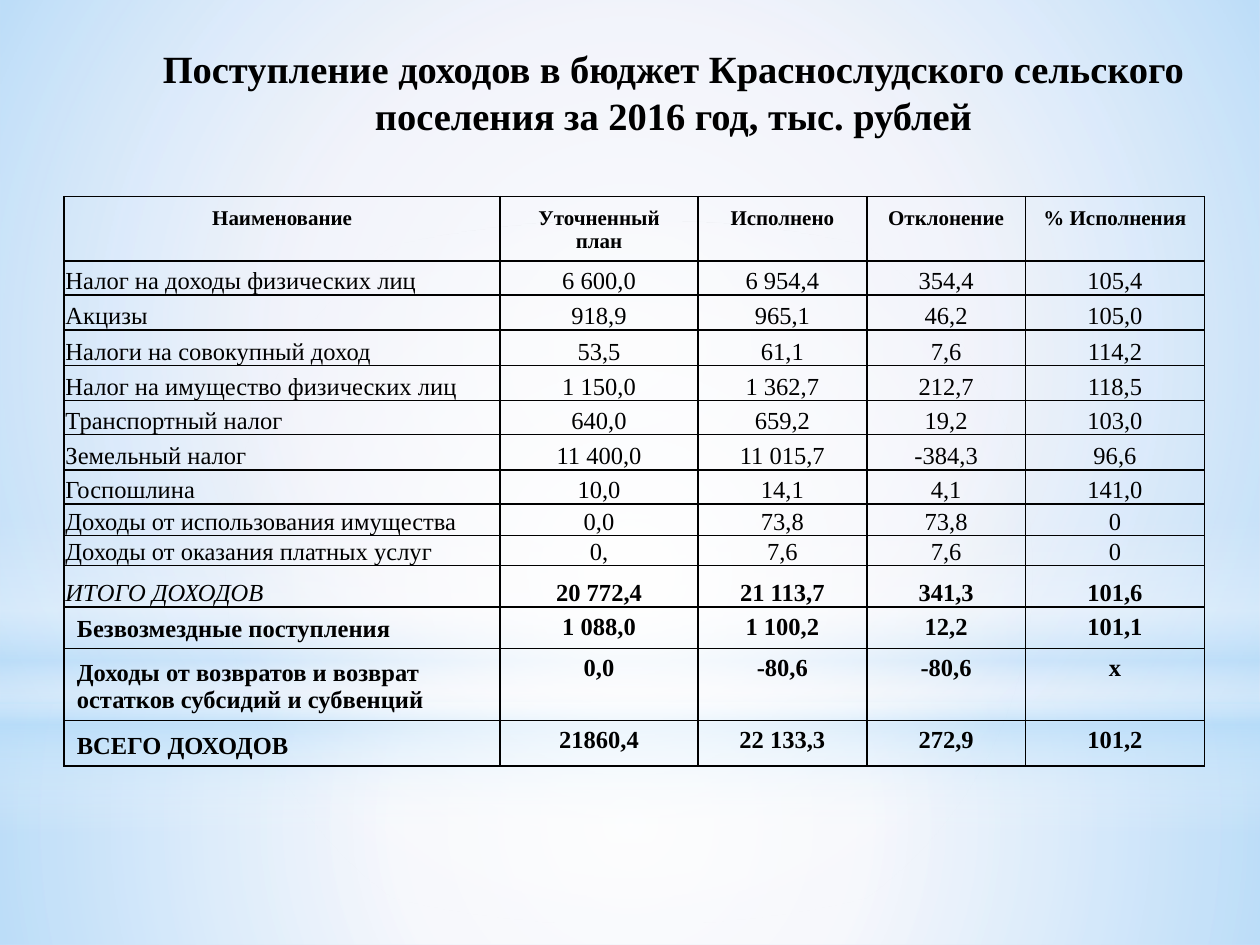
from dataclasses import dataclass
from typing import NamedTuple

from lxml import etree
from pptx import Presentation
from pptx import util as u
from pptx.dml.color import RGBColor
from pptx.enum import shapes, text
from pptx.oxml import parse_xml
from pptx.oxml.ns import nsdecls, qn


@dataclass(frozen=True)
class Theme:
    font: str = "Times New Roman"
    ink: str = "000000"
    background: str = "DCE1F4"
    white: str = "FFFFFF"
    sky: str = "B4DCFA"
    title_size: float = 22
    header_size: float = 12
    body_size: float = 14
    border_width: float = 1


THEME = Theme()


class Stop(NamedTuple):
    position: int
    color: str
    opacity: int


class Glow(NamedTuple):
    kind: shapes.MSO_SHAPE
    top: float
    height: float
    stops: tuple[Stop, ...]
    radial: bool = True


class Row(NamedTuple):
    height: float
    label: str
    values: tuple[str, ...]
    style: str = "item"


GLOWS = (
    Glow(shapes.MSO_SHAPE.RECTANGLE, 5.58, 1.92,
         (Stop(0, THEME.white, 91), Stop(37, THEME.white, 76), Stop(100, THEME.sky, 79))),
    Glow(shapes.MSO_SHAPE.RECTANGLE, 0, 5.58,
         (Stop(0, THEME.white, 89), Stop(48, THEME.white, 62), Stop(100, THEME.sky, 79))),
    Glow(shapes.MSO_SHAPE.RECTANGLE, 4.12, 2.5,
         (Stop(0, THEME.white, 0), Stop(29, THEME.white, 30), Stop(45, THEME.sky, 40),
          Stop(55, THEME.white, 26), Stop(65, THEME.sky, 60), Stop(100, THEME.white, 0)),
         radial=False),
    Glow(shapes.MSO_SHAPE.OVAL, 1.75, 5.58,
         (Stop(0, THEME.white, 100), Stop(56, THEME.white, 0))),
)

COLUMN_WIDTHS = (3.46, 1.57, 1.34, 1.26, 1.42)
ROWS = (
    Row(0.51, "Наименование",
        ("Уточненный план", "Исполнено", "Отклонение", "% Исполнения"), "header"),
    Row(0.27, "Налог на доходы физических лиц", ("6 600,0", "6 954,4", "354,4", "105,4")),
    Row(0.28, "Акцизы", ("918,9", "965,1", "46,2", "105,0")),
    Row(0.28, "Налоги на совокупный доход", ("53,5", "61,1", "7,6", "114,2")),
    Row(0.28, "Налог на имущество физических лиц", ("1 150,0", "1 362,7", "212,7", "118,5")),
    Row(0.27, "Транспортный налог", ("640,0", "659,2", "19,2", "103,0")),
    Row(0.28, "Земельный налог", ("11 400,0", "11 015,7", "-384,3", "96,6")),
    Row(0.27, "Госпошлина", ("10,0", "14,1", "4,1", "141,0")),
    Row(0.25, "Доходы от использования имущества", ("0,0", "73,8", "73,8", "0")),
    Row(0.24, "Доходы от оказания платных услуг", ("0,", "7,6", "7,6", "0")),
    Row(0.33, "ИТОГО ДОХОДОВ", ("20 772,4", "21 113,7", "341,3", "101,6"), "subtotal"),
    Row(0.33, "Безвозмездные поступления", ("1 088,0", "1 100,2", "12,2", "101,1"), "summary"),
    Row(0.57, "Доходы от возвратов и возврат остатков субсидий и субвенций",
        ("0,0", "-80,6", "-80,6", "х"), "summary"),
    Row(0.36, "ВСЕГО ДОХОДОВ", ("21860,4", "22 133,3", "272,9", "101,2"), "summary"),
)


def add_glow(slide, master, index: int, glow: Glow) -> None:
    """Draw a translucent gradient and place it on the master, behind its placeholders."""
    shape = slide.shapes.add_shape(glow.kind, 0, u.Inches(glow.top),
                                   u.Inches(10), u.Inches(glow.height))
    shape.shadow.inherit = False
    shape.line.fill.background()
    stops = "".join(
        f'<a:gs pos="{stop.position * 1000}"><a:srgbClr val="{stop.color}">'
        f'<a:alpha val="{stop.opacity * 1000}"/></a:srgbClr></a:gs>' for stop in glow.stops)
    direction = ('<a:path path="circle"><a:fillToRect l="50000" t="50000" r="50000" '
                 'b="50000"/></a:path>' if glow.radial else '<a:lin ang="5400000" scaled="0"/>')
    gradient = parse_xml(f'<a:gradFill {nsdecls("a")} rotWithShape="1">'
                         f'<a:gsLst>{stops}</a:gsLst>{direction}</a:gradFill>')
    shape._element.spPr.find(qn("a:prstGeom")).addnext(gradient)
    master.shapes._spTree.insert(2 + index, shape._element)


def format_paragraph(paragraph, size: float, bold: bool, italic: bool = False,
                     centered: bool = True) -> None:
    paragraph.alignment = text.PP_ALIGN.CENTER if centered else text.PP_ALIGN.LEFT
    for run in paragraph.runs:
        run.font.name = THEME.font
        run.font.size = u.Pt(size)
        run.font.bold = bold
        run.font.italic = italic
        run.font.color.rgb = RGBColor.from_string(THEME.ink)


def add_title(slide, wording: str) -> None:
    title = slide.shapes.title
    title.left, title.top, title.width, title.height = map(u.Inches, (0.78, 0.31, 9.13, 1.21))
    frame = title.text_frame
    frame.text = wording
    frame.word_wrap = True
    frame.auto_size = text.MSO_AUTO_SIZE.NONE
    frame.vertical_anchor = text.MSO_ANCHOR.TOP
    format_paragraph(frame.paragraphs[0], THEME.title_size, bold=True)


def set_borders(cell) -> None:
    properties = cell._tc.get_or_add_tcPr()
    for index, side in enumerate(("lnL", "lnR", "lnT", "lnB")):
        line = etree.Element(qn(f"a:{side}"), w=str(u.Pt(THEME.border_width)))
        fill = etree.SubElement(line, qn("a:solidFill"))
        etree.SubElement(fill, qn("a:srgbClr"), val=THEME.ink)
        properties.insert(index, line)


def fill_cell(cell, wording: str, style: str, is_label: bool) -> None:
    cell.text = wording
    cell.fill.background()
    set_borders(cell)
    header, summary = style == "header", style == "summary"
    if header:
        cell.margin_top = u.Inches(0.08)
    elif not summary:
        cell.margin_left = cell.margin_right = cell.margin_top = u.Inches(0.01)
        cell.margin_bottom = 0
    top_aligned = header or (summary and not is_label)
    cell.vertical_anchor = text.MSO_ANCHOR.TOP if top_aligned else text.MSO_ANCHOR.BOTTOM
    subtotal_label = style == "subtotal" and is_label
    format_paragraph(cell.text_frame.paragraphs[0],
                     THEME.header_size if header else THEME.body_size,
                     bold=style != "item" and not subtotal_label,
                     italic=subtotal_label,
                     centered=header or not is_label)


def add_income_table(slide) -> None:
    frame = slide.shapes.add_table(
        len(ROWS), len(COLUMN_WIDTHS), u.Inches(0.51), u.Inches(1.56),
        u.Inches(sum(COLUMN_WIDTHS)), u.Inches(sum(row.height for row in ROWS)))
    table = frame.table
    table.horz_banding = False
    for column, width in zip(table.columns, COLUMN_WIDTHS):
        column.width = u.Inches(width)
    for table_row, row in zip(table.rows, ROWS):
        table_row.height = u.Inches(row.height)
        for index, (cell, wording) in enumerate(zip(table_row.cells, (row.label, *row.values))):
            fill_cell(cell, wording, row.style, is_label=index == 0)


def main() -> None:
    presentation = Presentation()
    presentation.slide_width, presentation.slide_height = u.Inches(10), u.Inches(7.5)
    slide = presentation.slides.add_slide(presentation.slide_layouts[5])
    master = presentation.slide_master
    master.background.fill.solid()
    master.background.fill.fore_color.rgb = RGBColor.from_string(THEME.background)
    for index, glow in enumerate(GLOWS):
        add_glow(slide, master, index, glow)
    add_title(slide, "Поступление доходов в бюджет Краснослудского сельского "
                     "поселения за 2016 год, тыс. рублей")
    add_income_table(slide)
    presentation.save("out.pptx")


if __name__ == "__main__":
    main()
